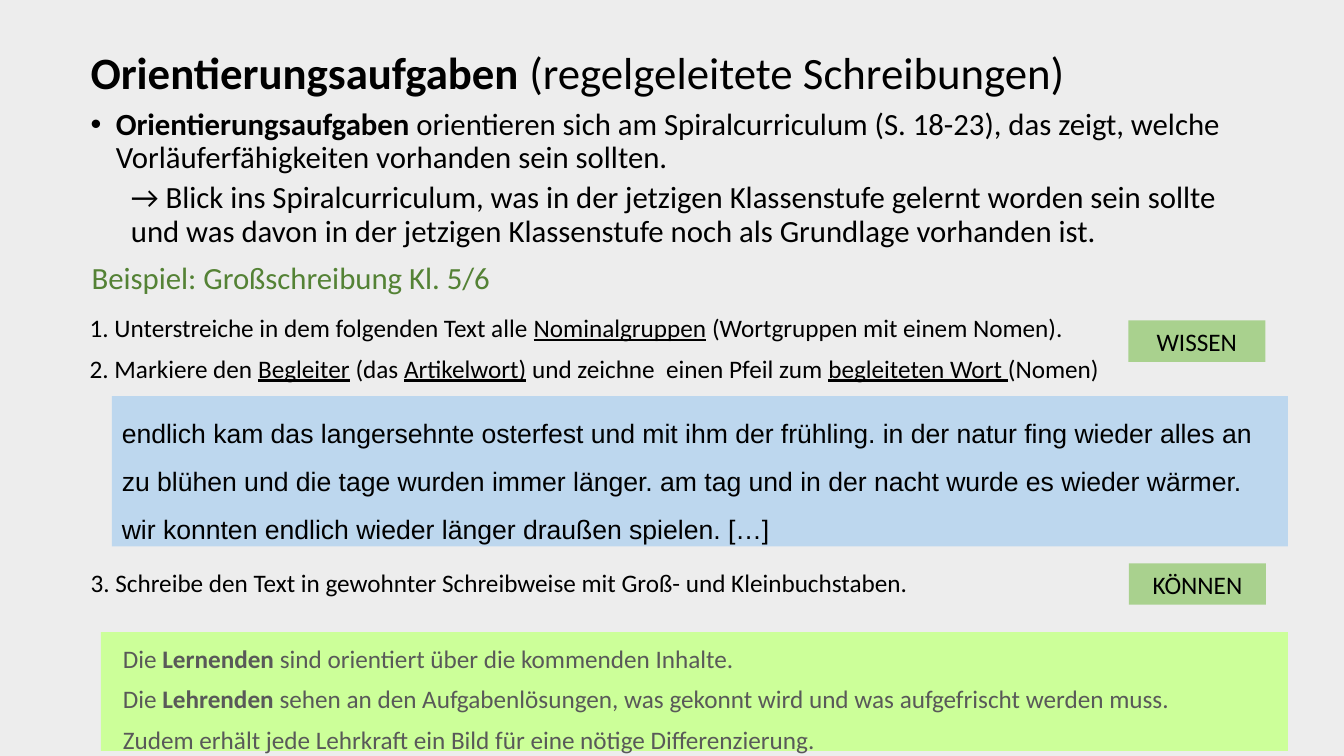
import pptx
import pptx.dml.color
import pptx.enum.shapes
import pptx.enum.text
import pptx.oxml.ns
import pptx.util
from lxml import etree

COLORS = {"ground": "EDEDED", "black": "000000", "example": "548235", "sentence": "BDD7EE",
          "benefit": "CCFF99", "skill": "A9D18E", "grey": "595959"}
BOLD, UNDERLINE = {"bold": True}, {"underline": True}

# A paragraph is a list of (text, font format) runs.
TITLE = [[("Orientierungsaufgaben", BOLD), (" (regelgeleitete Schreibungen)", {})]]
CURRICULUM = [
    [("Orientierungsaufgaben", BOLD),
     (" orientieren sich am Spiralcurriculum (S. 18-23), das zeigt, welche "
      "Vorläuferfähigkeiten vorhanden sein sollten.", {})],
    [("→ Blick ins Spiralcurriculum, was in der jetzigen Klassenstufe gelernt worden sein sollte "
      "und was davon in der jetzigen Klassenstufe noch als Grundlage vorhanden ist.", {})],
]
EXAMPLE = [[("Beispiel: Großschreibung Kl. 5/6", {})]]
KNOWLEDGE_TASKS = [
    [("1. Unterstreiche in dem folgenden Text alle ", {}), ("Nominalgruppen", UNDERLINE),
     (" (Wortgruppen mit einem Nomen).", {})],
    [("2. Markiere den ", {}), ("Begleiter", UNDERLINE), (" (das ", {}),
     ("Artikelwort)", UNDERLINE), (" und zeichne  einen Pfeil zum ", {}),
     ("begleiteten Wort ", UNDERLINE), ("(Nomen)", {})],
]
SENTENCES = [[(
    "endlich kam das langersehnte osterfest und mit ihm der frühling. in der natur fing wieder "
    "alles an zu blühen und die tage wurden immer länger. am tag und in der nacht wurde es wieder "
    "wärmer. wir konnten endlich wieder länger draußen spielen. […]", {})]]
WRITING_TASK = [
    [("3. Schreibe den Text in gewohnter Schreibweise mit Groß- und Kleinbuchstaben.", {})]]
BENEFITS = [
    [("Die ", {}), ("Lernenden", BOLD), (" sind orientiert über die kommenden Inhalte.", {})],
    [("Die", {}), (" Lehrenden ", BOLD),
     ("sehen an den Aufgabenlösungen, was gekonnt wird und was aufgefrischt werden muss.", {})],
    [("Zudem erhält jede Lehrkraft ein Bild für eine nötige Differenzierung.", {})],
]

ANCHOR, ALIGN = pptx.enum.text.MSO_ANCHOR, pptx.enum.text.PP_ALIGN
# Per paragraph: (left margin, first-line indent) in inches, space before in points
CURRICULUM_STEPS = [(0.25, -0.25, 10), (0.4, 0, 5)]
TASK_STEPS = [(0, 0, 3)] * 2
BENEFIT_STEPS = [(0.12, 0, 3)] * 3
PLAIN = [(0, 0, 0)]
TIGHT, ROOMY, WIDE = ({"line_spacing": spacing} for spacing in (0.9, 1.2, 1.5))
AFTER_SENTENCES = {**WIDE, "space_after": pptx.util.Pt(8)}
CENTERED = {"alignment": ALIGN.CENTER}

# (left, top, width, height) in percent of the slide, paragraphs, fill, size, font, colour,
# paragraph steps, paragraph format, anchor
BLOCKS = [
    ((6, 4.67, 86.25, 10.53), TITLE, None, 32, "Calibri", "black", PLAIN, TIGHT, ANCHOR.MIDDLE),
    ((6, 13.73, 86.25, 20.8), CURRICULUM, None, 22, "Calibri", "black",
     CURRICULUM_STEPS, TIGHT, ANCHOR.TOP),
    ((6.08, 33.6, 77.94, 6.27), EXAMPLE, None, 22, "Calibri", "example", PLAIN, {}, ANCHOR.TOP),
    ((5.93, 39.87, 77.94, 10.53), KNOWLEDGE_TASKS, None, 18, "Calibri", "black",
     TASK_STEPS, ROOMY, ANCHOR.TOP),
    ((8.33, 52.4, 87.5, 19.87), SENTENCES, "sentence", 19, "Arial", "black",
     PLAIN, AFTER_SENTENCES, ANCHOR.TOP),
    ((6, 74.4, 90.55, 5.33), WRITING_TASK, None, 18, "Calibri", "black", PLAIN, {}, ANCHOR.TOP),
    ((7.5, 83.6, 88.33, 15.73), BENEFITS, "benefit", 18, "Calibri", "grey",
     BENEFIT_STEPS, ROOMY, ANCHOR.TOP),
]
SKILLS = [("WISSEN", 83.95, 42.4), ("KÖNNEN", 84, 74.53)]
BLOCKS += [((left, top, 10.2, 5.47), [[(skill, {})]], "skill", 18, "Calibri", "black",
            PLAIN, CENTERED, ANCHOR.MIDDLE) for skill, left, top in SKILLS]


def rgb(name):
    return pptx.dml.color.RGBColor.from_string(COLORS[name])


def indent(paragraph, margin, first_line):
    """Set the indents; a hanging first line carries a bullet."""
    properties = paragraph._p.get_or_add_pPr()
    properties.set("marL", str(pptx.util.Inches(margin)))
    properties.set("indent", str(pptx.util.Inches(first_line)))
    if first_line < 0:
        font = etree.SubElement(properties, pptx.oxml.ns.qn("a:buFont"))
        font.set("typeface", "Arial")
        bullet = etree.SubElement(properties, pptx.oxml.ns.qn("a:buChar"))
        bullet.set("char", "•")


def add_block(slide, box, fill):
    if fill is None:
        return slide.shapes.add_textbox(*box)
    block = slide.shapes.add_shape(pptx.enum.shapes.MSO_SHAPE.RECTANGLE, *box)
    block.shadow.inherit = False
    block.fill.solid()
    block.fill.fore_color.rgb = rgb(fill)
    block.line.fill.background()
    return block


def write(frame, paragraphs, steps, layout, size, face, color):
    for number, (runs, (margin, first_line, before)) in enumerate(zip(paragraphs, steps)):
        paragraph = frame.paragraphs[0] if number == 0 else frame.add_paragraph()
        paragraph_format = {"alignment": ALIGN.LEFT, "space_before": pptx.util.Pt(before), **layout}
        for key, value in paragraph_format.items():
            setattr(paragraph, key, value)
        indent(paragraph, margin, first_line)
        for text, emphasis in runs:
            run = paragraph.add_run()
            run.text = text
            run.font.color.rgb = rgb(color)
            font_format = {"size": pptx.util.Pt(size), "name": face, **emphasis}
            for key, value in font_format.items():
                setattr(run.font, key, value)


def main():
    deck = pptx.Presentation()
    deck.slide_width, deck.slide_height = pptx.util.Inches(13.33), pptx.util.Inches(7.5)
    slide = deck.slides.add_slide(deck.slide_layouts[6])
    slide.background.fill.solid()
    slide.background.fill.fore_color.rgb = rgb("ground")
    sides = (deck.slide_width, deck.slide_height) * 2
    for shares, paragraphs, fill, size, face, color, steps, layout, anchor in BLOCKS:
        box = [int(side * share / 100) for side, share in zip(sides, shares)]
        frame = add_block(slide, box, fill).text_frame
        frame.word_wrap = True
        frame.vertical_anchor = anchor
        write(frame, paragraphs, steps, layout, size, face, color)
    deck.save("out.pptx")


if __name__ == "__main__":
    main()
